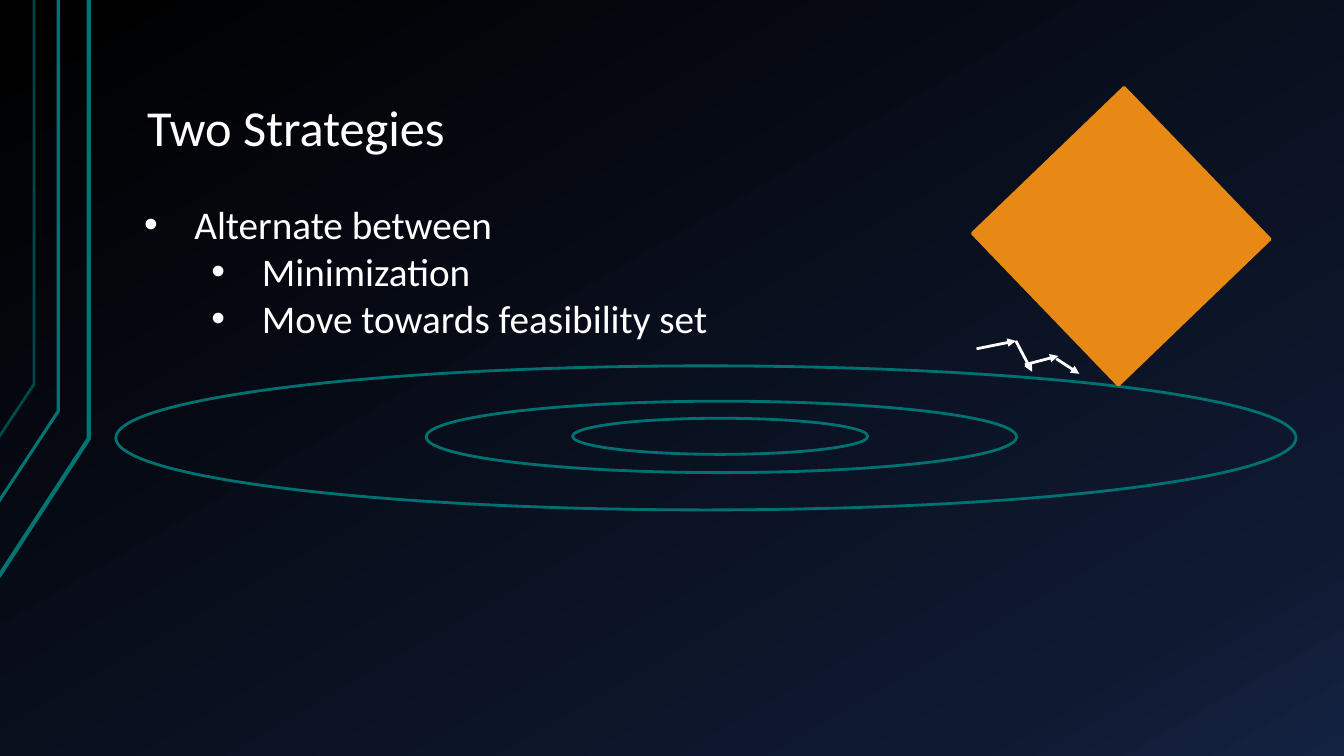
"""Build the slide 'Two Strategies' with contour rings, a feasible set and a zigzag path."""
from lxml import etree
from pptx import Presentation, util as u
from pptx.dml.color import RGBColor
from pptx.enum import shapes, text
from pptx.oxml.ns import qn

TITLE = "Two Strategies"
BULLETS = [(0, "Alternate between"), (1, "Minimization"), (1, "Move towards feasibility set")]
INDENTS = (1.27, 2.97)
HANGING = 1.27
FONT, WHITE, TEAL, RING_TEAL, ORANGE = "Calibri", "FFFFFF", "007373", "007171", "E98915"
BACKGROUND = [(0, "000000"), (85, "0F1931"), (100, "142242")]
CORNER_LINES = [
    ([(-0.03, 14.53), (2.24, 11.05), (2.24, 0)], 3, 100),
    ([(-0.05, 12.67), (1.47, 10.36), (1.47, 0)], 2.25, 100),
    ([(-0.03, 11.02), (0.86, 9.68), (0.86, 0)], 2, 60),
]
RINGS = [(2.92, 9.22, 29.74, 3.63), (10.74, 10.11, 14.88, 1.8), (14.43, 10.54, 7.44, 0.91)]
FEASIBLE_SET = (25.6, 3.3, 5.31, 5.31)
STEPS = [
    (24.61, 8.79, 25.6, 8.59),
    (25.6, 8.59, 26.01, 9.37),
    (25.83, 9.19, 26.67, 8.97),
    (26.62, 9.04, 27.2, 9.42),
]


def cm(values):
    return [u.Cm(value) for value in values]


def colour(target, value):
    target.rgb = RGBColor.from_string(value)


def stroke(line, value, width):
    line.fill.solid()
    colour(line.fill.fore_color, value)
    line.width = u.Pt(width)


def paint_background(slide):
    fill = slide.background.fill
    fill.gradient()
    fill.gradient_angle = 300
    stops = slide.element.find(".//" + qn("a:gsLst"))
    for stop in list(stops):
        stops.remove(stop)
    for position, value in BACKGROUND:
        stop = etree.SubElement(stops, qn("a:gs"), pos=str(position * 1000))
        etree.SubElement(stop, qn("a:srgbClr"), val=value)


def add_corner_line(slide, points, width, opacity):
    start, *rest = [cm(point) for point in points]
    builder = slide.shapes.build_freeform(*start)
    builder.add_line_segments(rest, close=False)
    shape = builder.convert_to_shape()
    shape.shadow.inherit = False
    shape.fill.background()
    stroke(shape.line, TEAL, width)
    if opacity < 100:
        tint = shape.element.find(".//" + qn("a:ln")).find(".//" + qn("a:srgbClr"))
        etree.SubElement(tint, qn("a:alpha"), val=str(opacity * 1000))


def add_outline(slide, kind, place, value):
    shape = slide.shapes.add_shape(kind, *cm(place))
    shape.shadow.inherit = False
    shape.fill.background()
    stroke(shape.line, value, 2)
    return shape


def add_step(slide, ends):
    step = slide.shapes.add_connector(shapes.MSO_CONNECTOR.STRAIGHT, *cm(ends))
    stroke(step.line, WHITE, 2)
    etree.SubElement(step.line._get_or_add_ln(), qn("a:tailEnd"), type="triangle")
    etree.SubElement(step.element.spPr, qn("a:effectLst"))


def add_frame(slide, place):
    frame = slide.shapes.add_textbox(*cm(place)).text_frame
    frame.word_wrap = True
    return frame


def add_span(para, words, size):
    span = para.add_run()
    span.text = words
    span.font.name, span.font.size = FONT, u.Pt(size)
    colour(span.font.color, WHITE)


def add_title(slide):
    frame = add_frame(slide, (3.38, 0.76, 28.78, 3.4))
    frame.vertical_anchor = text.MSO_ANCHOR.BOTTOM
    frame.margin_left = frame.margin_right = u.Cm(0.33)
    frame.margin_top = frame.margin_bottom = u.Cm(0.18)
    para = frame.paragraphs[0]
    para.line_spacing = 0.9
    add_span(para, TITLE, 36)


def add_bullets(slide):
    frame = add_frame(slide, (3.38, 4.93, 15.14, 3.84))
    for number, (level, words) in enumerate(BULLETS):
        para = frame.add_paragraph() if number else frame.paragraphs[0]
        para.level = level
        layout = para._p.get_or_add_pPr()
        layout.set("marL", str(u.Cm(INDENTS[level])))
        layout.set("indent", str(-u.Cm(HANGING)))
        etree.SubElement(layout, qn("a:buFont"), typeface="Arial")
        etree.SubElement(layout, qn("a:buChar"), char="•")
        add_span(para, words, 28)


def main():
    deck = Presentation()
    deck.slide_width, deck.slide_height = cm((33.87, 19.05))
    slide = deck.slides.add_slide(deck.slide_layouts[6])
    paint_background(slide)
    for points, width, opacity in CORNER_LINES:
        add_corner_line(slide, points, width, opacity)
    add_title(slide)
    for place in RINGS:
        add_outline(slide, shapes.MSO_SHAPE.OVAL, place, RING_TEAL)
    feasible = add_outline(slide, shapes.MSO_SHAPE.RECTANGLE, FEASIBLE_SET, ORANGE)
    feasible.fill.solid()
    colour(feasible.fill.fore_color, ORANGE)
    feasible.rotation = 46.1
    add_bullets(slide)
    for ends in STEPS:
        add_step(slide, ends)
    deck.save("out.pptx")


if __name__ == "__main__":
    main()
